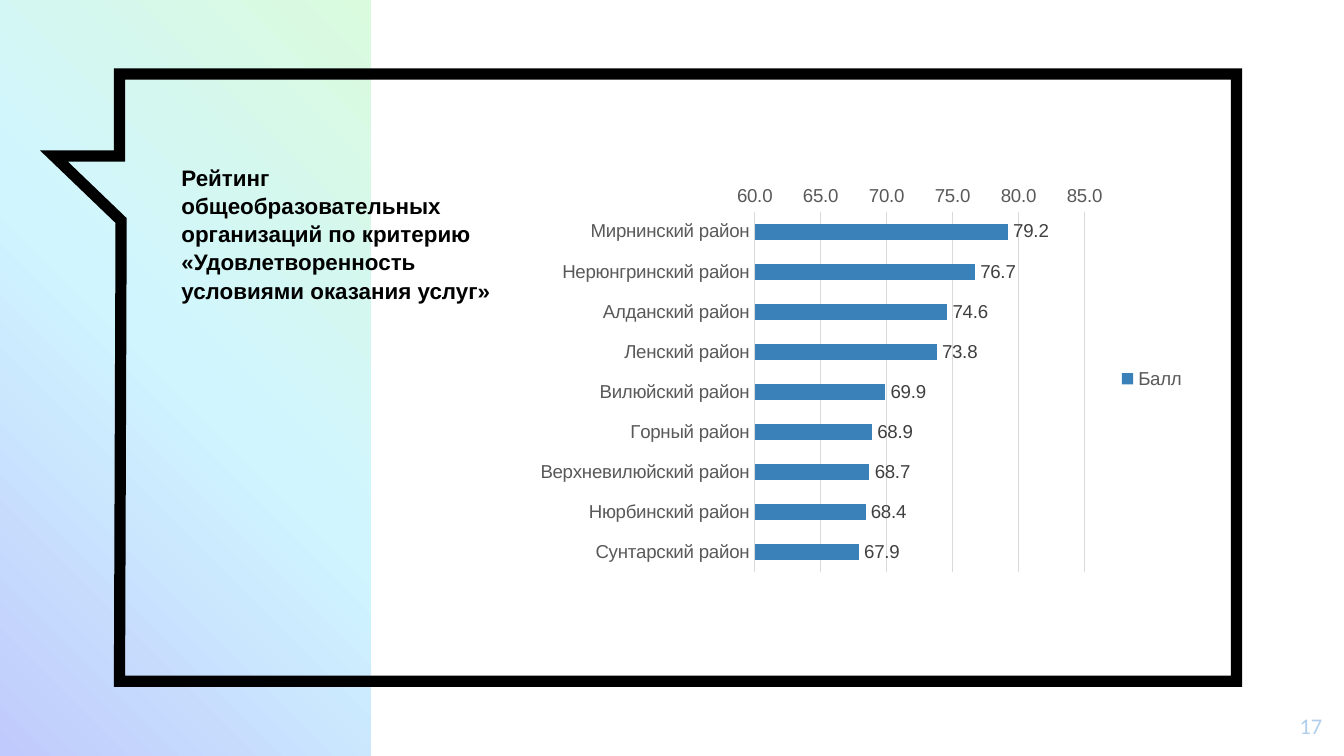
from copy import deepcopy
from typing import NamedTuple

from lxml.etree import SubElement
from pptx import Presentation
from pptx.chart.data import CategoryChartData
from pptx.dml.color import RGBColor
from pptx.enum.chart import XL_CHART_TYPE, XL_LABEL_POSITION, XL_LEGEND_POSITION, XL_TICK_MARK
from pptx.enum.shapes import MSO_SHAPE
from pptx.enum.text import MSO_ANCHOR, PP_ALIGN
from pptx.oxml.ns import qn
from pptx.util import Cm, Pt


class Box(NamedTuple):
    left: float
    top: float
    width: float
    height: float

    def lengths(self) -> list[Cm]:
        return [Cm(value) for value in self]


class Caption(NamedTuple):
    box: Box
    text: str
    font_name: str
    color: str
    bold: bool
    align: PP_ALIGN
    anchor: MSO_ANCHOR
    line_spacing: float


class District(NamedTuple):
    name: str
    score: float


class GradientStop(NamedTuple):
    position: float
    color: str


PANEL = Box(0, 0, 7.01, 14.29)
PANEL_STOPS = [GradientStop(0, "C0CAFC"), GradientStop(0.5, "D0F5FF"), GradientStop(1, "DAFBDD")]
BUBBLE_POINTS = [
    (2.26, 1.4), (23.37, 1.4), (23.37, 12.88), (2.26, 12.88),
    (2.29, 4.17), (1.02, 2.95), (2.26, 2.95),
]
CAPTIONS = [
    Caption(Box(23.72, 13.18, 1.52, 1.09), "17", "Calibri", "AFCFEC", False,
            PP_ALIGN.RIGHT, MSO_ANCHOR.MIDDLE, 1),
    Caption(Box(3.18, 2.95, 7.01, 2.82),
            "Рейтинг общеобразовательных организаций по критерию "
            "«Удовлетворенность условиями оказания услуг»",
            "Arial", "000000", True, PP_ALIGN.LEFT, MSO_ANCHOR.TOP, 1.05),
]
RATING = Box(9.96, 3.35, 12.7, 7.62)
DISTRICTS = [
    District("Мирнинский район", 79.2),
    District("Нерюнгринский район", 76.7),
    District("Алданский район", 74.6),
    District("Ленский район", 73.8),
    District("Вилюйский район", 69.9),
    District("Горный район", 68.9),
    District("Верхневилюйский район", 68.7),
    District("Нюрбинский район", 68.4),
    District("Сунтарский район", 67.9),
]


def rgb(color: str) -> RGBColor:
    return RGBColor.from_string(color)


def style_font(font, color: str, size: float = 10, name: str = "Arial", bold: bool = False) -> None:
    font.name = name
    font.size = Pt(size)
    font.bold = bold
    font.color.rgb = rgb(color)


def style_line(line, color: str, width: float) -> None:
    line.color.rgb = rgb(color)
    line.width = Pt(width)


def draw_panel(slide) -> None:
    panel = slide.shapes.add_shape(MSO_SHAPE.RECTANGLE, *PANEL.lengths())
    panel.shadow.inherit = False
    panel.line.fill.background()
    panel.fill.gradient()
    panel.fill.gradient_angle = 45
    stop_list = panel._element.spPr.find(qn("a:gradFill")).find(qn("a:gsLst"))
    stop_list.append(deepcopy(stop_list[0]))
    for stop, (position, color) in zip(panel.fill.gradient_stops, PANEL_STOPS):
        stop.position = position
        stop.color.rgb = rgb(color)


def draw_bubble(slide) -> None:
    start, *corners = [(Cm(x), Cm(y)) for x, y in BUBBLE_POINTS]
    builder = slide.shapes.build_freeform(*start)
    builder.add_line_segments(corners, close=True)
    bubble = builder.convert_to_shape()
    bubble.shadow.inherit = False
    bubble.fill.background()
    style_line(bubble.line, "000000", 6)
    outline = bubble._element.spPr.find(qn("a:ln"))
    SubElement(outline, qn("a:miter"), lim="800000")


def draw_caption(slide, caption: Caption) -> None:
    frame = slide.shapes.add_textbox(*caption.box.lengths()).text_frame
    frame.word_wrap = True
    frame.vertical_anchor = caption.anchor
    frame.text = caption.text
    paragraph = frame.paragraphs[0]
    paragraph.alignment = caption.align
    paragraph.line_spacing = caption.line_spacing
    style_font(paragraph.runs[0].font, caption.color, 12, caption.font_name, caption.bold)


def draw_rating(slide) -> None:
    scores = CategoryChartData(number_format="0.0")
    scores.categories = [district.name for district in DISTRICTS]
    scores.add_series("Балл", [district.score for district in DISTRICTS])
    chart = slide.shapes.add_chart(XL_CHART_TYPE.BAR_CLUSTERED, *RATING.lengths(), scores).chart
    style_font(chart.font, "000000")
    chart.has_title = False
    chart.has_legend = True
    chart.legend.position = XL_LEGEND_POSITION.RIGHT
    chart.legend.include_in_layout = False
    style_font(chart.legend.font, "595959")

    for axis in (chart.category_axis, chart.value_axis):
        axis.major_tick_mark = XL_TICK_MARK.NONE
        axis.minor_tick_mark = XL_TICK_MARK.NONE
        style_font(axis.tick_labels.font, "595959")
    chart.category_axis.reverse_order = True
    style_line(chart.category_axis.format.line, "D9D9D9", 0.75)

    score_axis = chart.value_axis
    score_axis.minimum_scale = 60
    score_axis.maximum_scale = 85
    score_axis.major_unit = 5
    score_axis.format.line.fill.background()
    style_line(score_axis.major_gridlines.format.line, "D9D9D9", 0.75)
    score_axis.tick_labels.number_format = "0.0"
    score_axis.tick_labels.number_format_is_linked = False

    plot = chart.plots[0]
    plot.gap_width = 150
    plot.vary_by_categories = False
    bars = plot.series[0]
    bars.format.fill.solid()
    bars.format.fill.fore_color.rgb = rgb("3A81BA")
    labels = bars.data_labels
    labels.show_value = True
    labels.position = XL_LABEL_POSITION.OUTSIDE_END
    labels.number_format = "0.0"
    labels.number_format_is_linked = False
    style_font(labels.font, "404040")


def main() -> None:
    presentation = Presentation()
    presentation.slide_width = Cm(25.4)
    presentation.slide_height = Cm(14.29)
    slide = presentation.slides.add_slide(presentation.slide_layouts[6])
    draw_panel(slide)
    draw_bubble(slide)
    for caption in CAPTIONS:
        draw_caption(slide, caption)
    draw_rating(slide)
    presentation.save("out.pptx")


if __name__ == "__main__":
    main()
